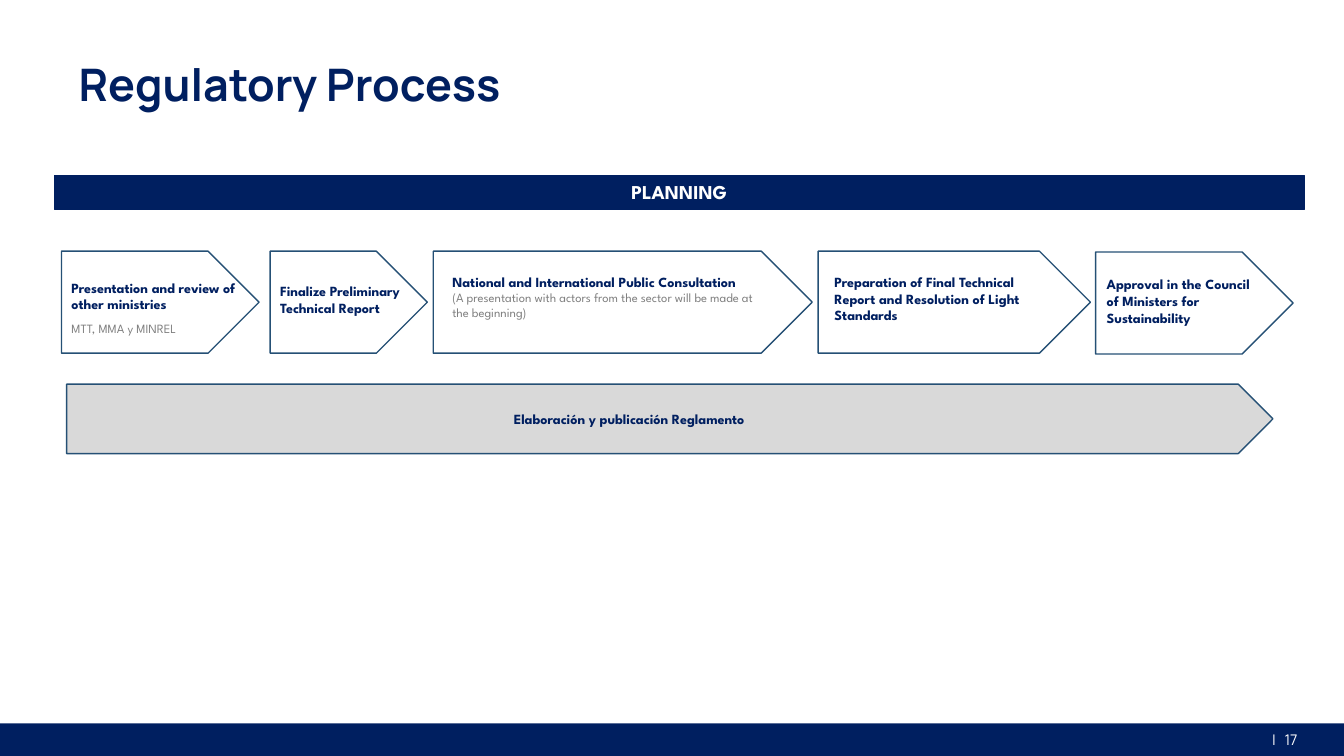
from dataclasses import dataclass

from pptx import Presentation
from pptx.dml.color import RGBColor
from pptx.enum.shapes import MSO_SHAPE as Shape
from pptx.enum.text import MSO_ANCHOR as Anchor, PP_ALIGN as Align
from pptx.util import Cm, Pt

NAVY = RGBColor(0x00, 0x1F, 0x60)
OUTLINE = RGBColor(0x25, 0x50, 0x75)
GRAY = RGBColor(0x80, 0x80, 0x80)
LIGHT = RGBColor(0xD9, 0xD9, 0xD9)
WHITE = RGBColor(0xFF, 0xFF, 0xFF)
HEAD, BODY = "Manrope", "League Spartan"


@dataclass
class Box:
    left: float
    top: float
    width: float
    height: float

    def emu(self):
        return Cm(self.left), Cm(self.top), Cm(self.width), Cm(self.height)


@dataclass
class Style:
    size: float
    color: RGBColor = NAVY
    bold: bool = True
    name: str = BODY


@dataclass
class Label:
    box: Box
    text: str
    style: Style
    note: str = ""


LABEL = Style(10)
NOTE = Style(9, GRAY, False)

# Process steps: outline of each arrow and its label
STEPS = [Box(1.55, 6.33, 4.98, 2.57), Box(6.81, 6.33, 3.96, 2.57),
         Box(10.92, 6.33, 9.55, 2.57), Box(20.62, 6.33, 6.86, 2.57),
         Box(27.61, 6.35, 4.98, 2.57)]
LABELS = [
    Label(Box(1.55, 6.91, 4.85, 1.12), "Presentation and review of other ministries", LABEL),
    Label(Box(1.55, 7.95, 5.82, 0.64), "MTT, MMA y MINREL", NOTE),
    Label(Box(6.81, 6.99, 3.96, 1.12), "Finalize Preliminary Technical Report", LABEL),
    Label(Box(11.15, 6.76, 8.23, 1.88), "National and International Public Consultation", LABEL,
          "(A presentation with actors from the sector will be made at the beginning)"),
    Label(Box(20.78, 6.76, 5.82, 1.55),
          "Preparation of Final Technical Report and Resolution of Light Standards", LABEL),
    Label(Box(27.64, 6.83, 4.47, 1.55),
          "Approval in the Council of Ministers for Sustainability", LABEL),
    Label(Box(12.7, 10.21, 10.74, 0.69), "Elaboración y publicación Reglamento", LABEL),
]


def set_font(font, style: Style) -> None:
    font.name, font.size, font.bold = style.name, Pt(style.size), style.bold
    font.color.rgb = style.color


def write(sp, text: str, style: Style, align=Align.LEFT, anchor=Anchor.TOP):
    tf = sp.text_frame
    tf.word_wrap, tf.vertical_anchor = True, anchor
    p = tf.paragraphs[0]
    p.alignment = align
    r = p.add_run()
    r.text = text
    set_font(p.font, style)
    return p


def add_block(s, kind, box: Box, fill: RGBColor, line: RGBColor | None = None,
              weight: float = 1):
    sp = s.shapes.add_shape(kind, *box.emu())
    sp.shadow.inherit = False
    sp.fill.solid()
    sp.fill.fore_color.rgb = fill
    if line is None:
        sp.line.fill.background()
    else:
        sp.line.color.rgb, sp.line.width = line, Pt(weight)
    return sp


def add_label(s, label: Label) -> None:
    p = write(s.shapes.add_textbox(*label.box.emu()), label.text, label.style)
    if label.note:
        set_font(p.runs[0].font, label.style)
        p.add_line_break()
        r = p.add_run()
        r.text = label.note
        set_font(r.font, NOTE)


def main() -> None:
    prs = Presentation()
    prs.slide_width, prs.slide_height = Cm(33.87), Cm(19.05)
    s = prs.slides.add_slide(prs.slide_layouts[6])

    # Footer band and page number
    add_block(s, Shape.RECTANGLE, Box(0, 18.23, 33.87, 0.82), NAVY)
    number = s.shapes.add_textbox(*Box(30.94, 18.21, 2.01, 0.84).emu())
    write(number, "|   17", Style(10.5, WHITE, False, HEAD), Align.RIGHT, Anchor.MIDDLE)

    # Title
    title = s.shapes.add_textbox(*Box(1.73, 0.46, 26.31, 2.46).emu())
    p = write(title, "Regulatory Process", Style(32, name=HEAD), anchor=Anchor.BOTTOM)
    p.line_spacing = 0.9

    # Phase banner
    banner = add_block(s, Shape.RECTANGLE, Box(1.37, 4.42, 31.5, 0.86), NAVY, NAVY, 0.75)
    write(banner, "PLANNING", Style(14, WHITE), Align.CENTER)

    # Arrows and their labels
    for step in STEPS:
        add_block(s, Shape.PENTAGON, step, WHITE, OUTLINE)
    add_block(s, Shape.PENTAGON, Box(1.68, 9.68, 30.4, 1.75), LIGHT, OUTLINE)
    for label in LABELS:
        add_label(s, label)

    prs.save("out.pptx")


if __name__ == "__main__":
    main()
